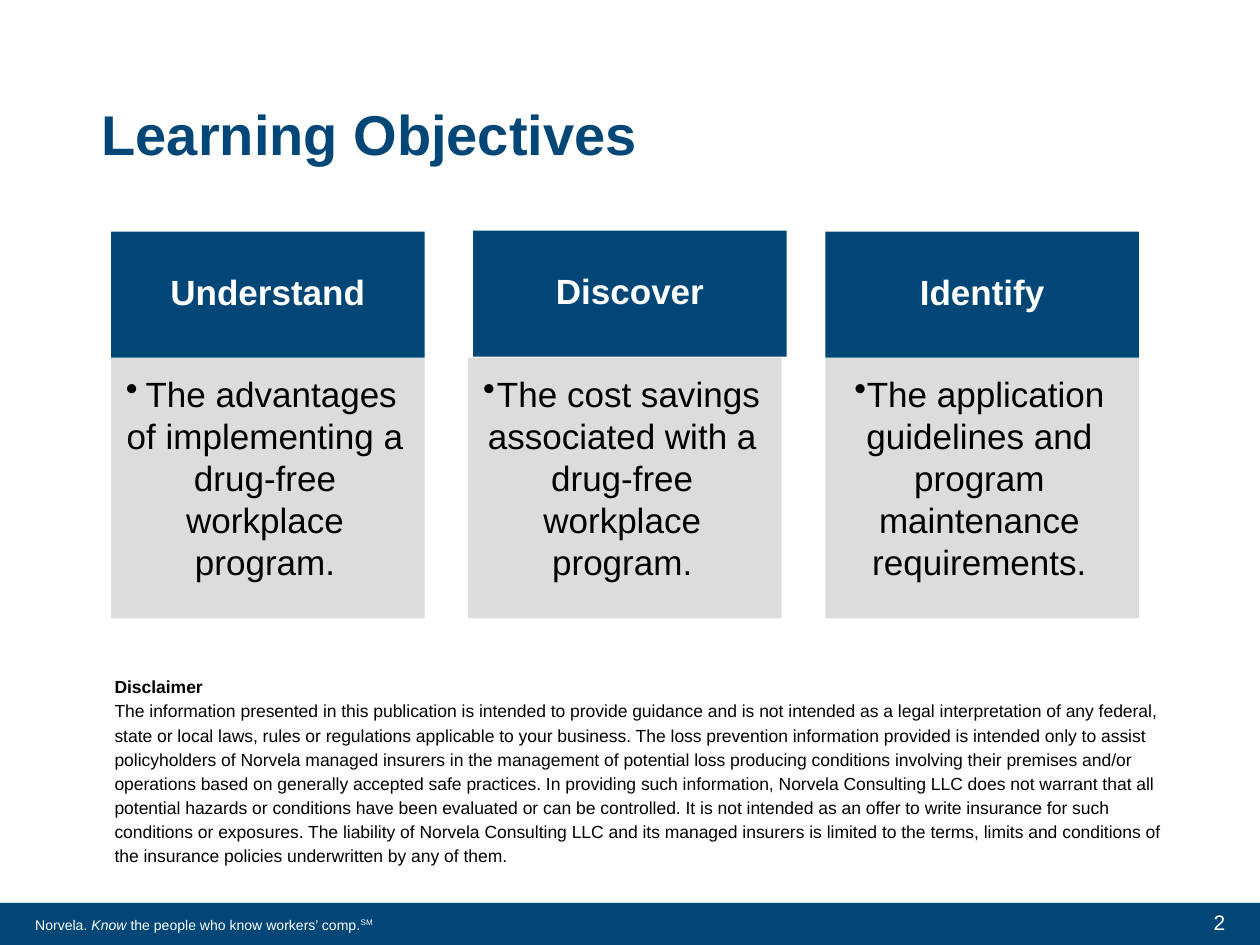
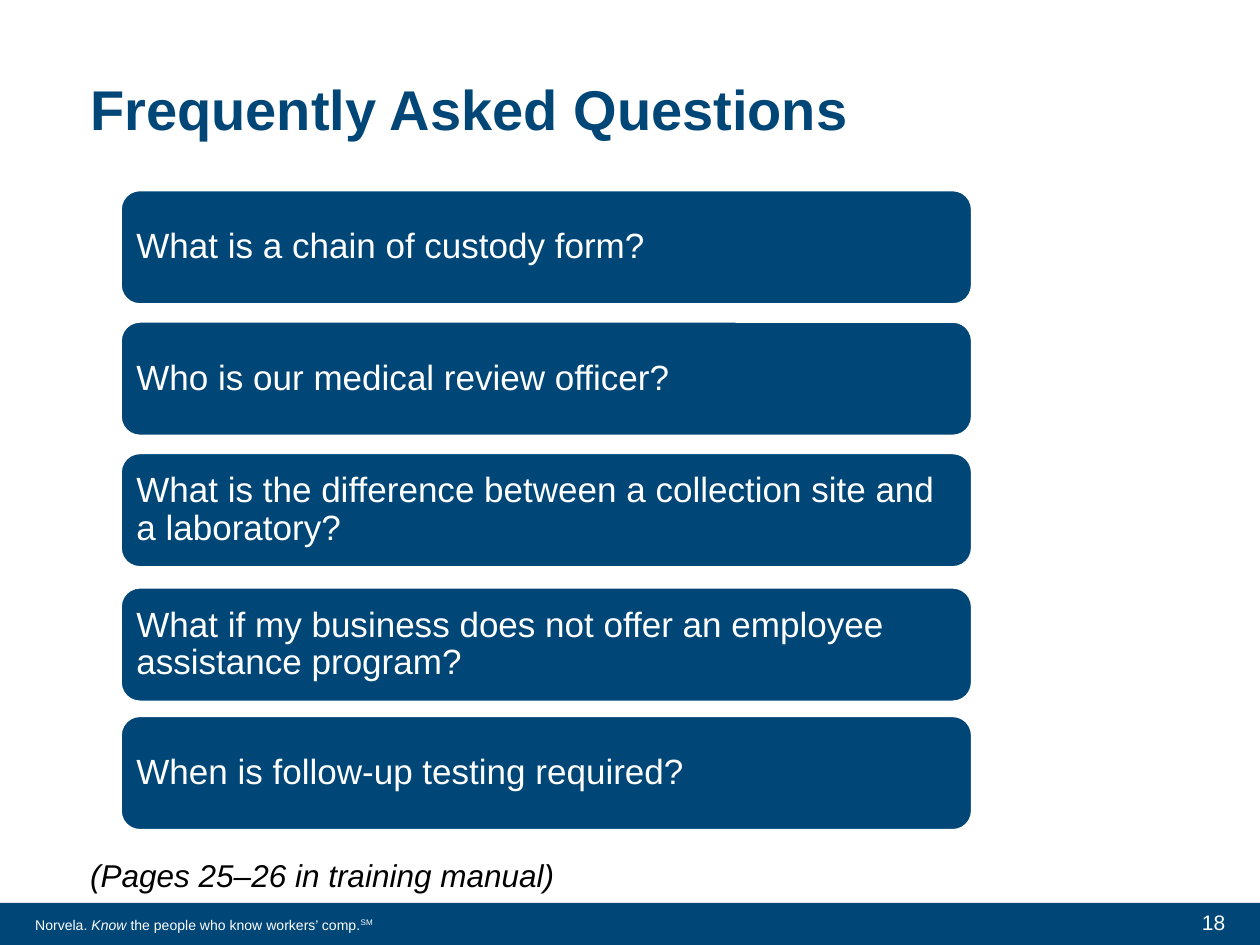
"""Build the objectives and questions slides of a drug-free workplace training."""
from dataclasses import dataclass
from typing import Any, NamedTuple

from lxml.etree import SubElement
from pptx import Presentation
from pptx.dml.color import RGBColor
from pptx.enum.shapes import MSO_SHAPE as ShapeKind
from pptx.enum.text import MSO_ANCHOR as Anchor, MSO_AUTO_SIZE as AutoSize, PP_ALIGN as Align
from pptx.oxml.ns import qn
from pptx.util import Cm, Pt


@dataclass(frozen=True)
class Theme:
    """Colours, font and type sizes."""
    font: str = "Arial"
    navy: RGBColor = RGBColor(0x00, 0x46, 0x77)
    gray: RGBColor = RGBColor(0xD9, 0xD9, 0xD9)
    white: RGBColor = RGBColor(0xFF, 0xFF, 0xFF)
    black: RGBColor = RGBColor(0, 0, 0)
    title: int = 32
    body: int = 20
    note: int = 18
    page: int = 12
    disclaimer: int = 10
    footer: int = 8


class Box(NamedTuple):
    """Left, top, width and height in centimetres."""
    left: float
    top: float
    width: float
    height: float

    def lengths(self) -> list[Cm]:
        """Return the four values as lengths."""
        return [Cm(value) for value in self]


class Run(NamedTuple):
    """Text with the font settings that differ from its paragraph."""
    text: str
    format: dict[str, Any] = {}
    superscript: bool = False


class Style(NamedTuple):
    """Look of the text in one shape."""
    size: int
    color: RGBColor
    font: dict[str, Any] = {}
    paragraph: dict[str, Any] = {}
    anchor: Anchor = Anchor.TOP
    insets: tuple[float, float, float, float] = (0.25, 0.13, 0.25, 0.13)


class Objective(NamedTuple):
    """One card with a heading and a bulleted text."""
    heading: str
    text: str
    hanging: float
    shift: tuple[float, float] = (0, 0)


class Question(NamedTuple):
    """One question bar, with a small move down from its row."""
    text: str
    nudge: float = 0


THEME = Theme()
TITLE = Style(THEME.title, THEME.navy, {"bold": True},
              {"alignment": Align.LEFT, "line_spacing": 0.9}, Anchor.BOTTOM)
FOOTER = Style(THEME.footer, THEME.white)
PAGE = Style(THEME.page, THEME.white, {}, {"alignment": Align.RIGHT}, Anchor.MIDDLE)
HEADING = Style(THEME.body, THEME.white, {"bold": True},
                {"alignment": Align.CENTER, "line_spacing": 0.9}, Anchor.MIDDLE,
                (0.4, 0.23, 0.4, 0.23))
CARD = Style(THEME.body, THEME.black, {}, {"alignment": Align.CENTER},
             insets=(0.3, 0.3, 0.41, 0.43))
BAR = Style(THEME.body, THEME.white, {}, {"alignment": Align.LEFT, "line_spacing": 0.9},
            Anchor.MIDDLE, (0.2, 0.2, 0.2, 0.2))
DISCLAIMER = Style(THEME.disclaimer, THEME.black, {}, {"line_spacing": 1.15})
NOTE = Style(THEME.note, THEME.black, {"italic": True},
             {"line_spacing": 0.9, "space_before": Pt(10)})

CARD_LEFT, CARD_PITCH, CARD_WIDTH = 2.24, 7.2, 6.32
HEADING_TOP, HEADING_HEIGHT, CARD_HEIGHT = 4.67, 2.54, 5.26
BAR_TOP, BAR_PITCH = 3.84, 2.65

FOOTER_RUNS = [Run("Norvela. "), Run("Know", {"italic": True}),
               Run(" the people who know workers’ comp."), Run("SM", superscript=True)]

OBJECTIVES = [
    Objective("Understand",
              "The advantages of implementing a drug-free workplace program.", -0.64),
    Objective("Discover",
              "The cost savings associated with a drug-free workplace program.", -0.64,
              (0.1, -0.02)),
    Objective("Identify",
              "The application guidelines and program maintenance requirements.", 0),
]

DISCLAIMER_SENTENCES = [
    "The information presented in this publication is intended to provide guidance and is not "
    "intended as a legal interpretation of any federal, state or local laws, rules or regulations "
    "applicable to your business.",
    "The loss prevention information provided is intended only to assist policyholders of Norvela "
    "managed insurers in the management of potential loss producing conditions involving their "
    "premises and/or operations based on generally accepted safe practices.",
    "In providing such information, Norvela Consulting LLC does not warrant that all potential "
    "hazards or conditions have been evaluated or can be controlled.",
    "It is not intended as an offer to write insurance for such conditions or exposures.",
    "The liability of Norvela Consulting LLC and its managed insurers is limited to the terms, "
    "limits and conditions of the insurance policies underwritten by any of them.",
]

QUESTIONS = [
    Question("What is a chain of custody form?"),
    Question("Who is our medical review officer?"),
    Question("What is the difference between a collection site and a laboratory?"),
    Question("What if my business does not offer an employee assistance program?", 0.06),
    Question("When is follow-up testing required?"),
]


def apply(target: Any, values: dict[str, Any]) -> None:
    """Set each named attribute on the target."""
    for name, value in values.items():
        setattr(target, name, value)


def write(shape: Any, paragraphs: list[list[Run]], style: Style) -> None:
    """Fill a shape with styled paragraphs of runs."""
    frame = shape.text_frame
    sides = ("margin_left", "margin_top", "margin_right", "margin_bottom")
    apply(frame, {"word_wrap": True, "auto_size": AutoSize.NONE,
                  "vertical_anchor": style.anchor,
                  **{side: Cm(inset) for side, inset in zip(sides, style.insets)}})
    for index, runs in enumerate(paragraphs):
        paragraph = frame.add_paragraph() if index else frame.paragraphs[0]
        apply(paragraph, style.paragraph)
        for part in runs:
            run = paragraph.add_run()
            run.text = part.text
            apply(run.font, {"name": THEME.font, "size": Pt(style.size),
                             **style.font, **part.format})
            run.font.color.rgb = style.color
            if part.superscript:
                run.font._element.set("baseline", "30000")


def add_text(slide: Any, box: Box, paragraphs: list[list[Run]], style: Style) -> None:
    """Add a text box."""
    write(slide.shapes.add_textbox(*box.lengths()), paragraphs, style)


def add_panel(slide: Any, kind: ShapeKind, box: Box, color: RGBColor) -> Any:
    """Add a flat filled shape without an outline."""
    shape = slide.shapes.add_shape(kind, *box.lengths())
    shape.shadow.inherit = False
    shape.fill.solid()
    shape.fill.fore_color.rgb = color
    shape.line.fill.background()
    return shape


def set_opacity(shape: Any, percent: int) -> None:
    """Make the solid fill of a shape partly transparent."""
    color = shape._element.spPr.find(qn("a:solidFill"))[0]
    SubElement(color, qn("a:alpha")).set("val", str(percent * 1000))


def set_bullet(paragraph: Any, hanging: float) -> None:
    """Give a paragraph a round bullet."""
    properties = paragraph._p.get_or_add_pPr()
    properties.set("marL", "0")
    properties.set("indent", str(int(Cm(hanging))))
    SubElement(properties, qn("a:buChar")).set("char", "•")


def add_slide(presentation: Any, title: str, title_box: Box, page: int) -> Any:
    """Add a slide with its title, footer band and page number."""
    slide = presentation.slides.add_slide(presentation.slide_layouts[5])
    heading = slide.shapes.title
    apply(heading, dict(zip(("left", "top", "width", "height"), title_box.lengths())))
    write(heading, [[Run(title)]], TITLE)
    add_panel(slide, ShapeKind.RECTANGLE, Box(0, 18.2, 25.4, 0.85), THEME.navy)
    add_text(slide, Box(0.46, 18.34, 8.81, 0.7), [FOOTER_RUNS], FOOTER)
    add_text(slide, Box(19.23, 18.11, 5.72, 0.94), [[Run(str(page))]], PAGE)
    return slide


def add_objective(slide: Any, index: int, objective: Objective) -> None:
    """Draw one objective card in its column."""
    left = CARD_LEFT + index * CARD_PITCH
    right_shift, down_shift = objective.shift
    body = add_panel(slide, ShapeKind.RECTANGLE,
                     Box(left, HEADING_TOP + HEADING_HEIGHT, CARD_WIDTH, CARD_HEIGHT), THEME.gray)
    set_opacity(body, 90)
    write(body, [[Run(objective.text)]], CARD)
    set_bullet(body.text_frame.paragraphs[0], objective.hanging)
    header = add_panel(slide, ShapeKind.RECTANGLE,
                       Box(left + right_shift, HEADING_TOP + down_shift,
                           CARD_WIDTH, HEADING_HEIGHT), THEME.navy)
    write(header, [[Run(objective.heading)]], HEADING)


def add_question(slide: Any, index: int, question: Question) -> None:
    """Draw one question bar in its row."""
    top = BAR_TOP + index * BAR_PITCH + question.nudge
    bar = add_panel(slide, ShapeKind.ROUNDED_RECTANGLE, Box(2.44, top, 17.15, 2.29), THEME.navy)
    bar.line.color.rgb = THEME.white
    bar.line.width = Pt(1)
    write(bar, [[Run(question.text)]], BAR)


def main() -> None:
    """Build and save the presentation."""
    presentation = Presentation()
    apply(presentation, {"slide_width": Cm(25.4), "slide_height": Cm(19.05)})

    objectives = add_slide(presentation, "Learning Objectives", Box(1.8, 0.89, 14.4, 2.62), 2)
    for index, objective in enumerate(OBJECTIVES):
        add_objective(objectives, index, objective)
    add_text(objectives, Box(2.06, 13.44, 22, 4.6),
             [[Run("Disclaimer", {"bold": True})], [Run(" ".join(DISCLAIMER_SENTENCES))]],
             DISCLAIMER)

    questions = add_slide(presentation, "Frequently Asked Questions",
                          Box(1.57, 0.46, 22.28, 2.54), 18)
    for index, question in enumerate(QUESTIONS):
        add_question(questions, index, question)
    add_text(questions, Box(1.57, 17.22, 9.98, 0.98),
             [[Run("(Pages 25–26 in training manual)")]], NOTE)

    presentation.save("out.pptx")


if __name__ == "__main__":
    main()
